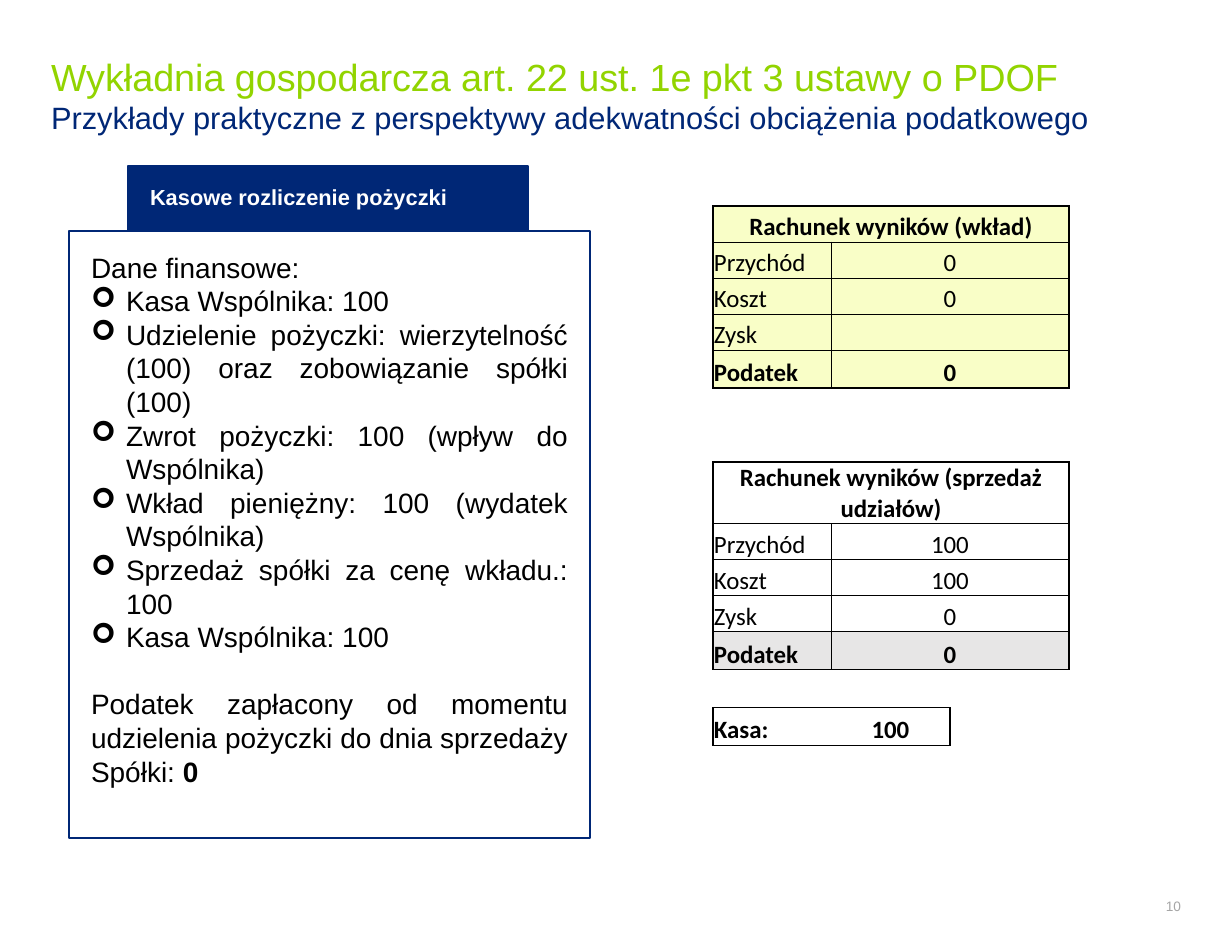
from dataclasses import dataclass

from lxml.etree import SubElement
from pptx import Presentation
from pptx.dml.color import RGBColor
from pptx.enum.shapes import MSO_SHAPE
from pptx.enum.text import MSO_ANCHOR, MSO_AUTO_SIZE, PP_ALIGN
from pptx.oxml.ns import qn
from pptx.util import Emu, Pt


@dataclass(frozen=True)
class Theme:
    """Colours, fonts and type sizes."""
    navy: str = "002776"
    green: str = "92D400"
    cream: str = "F9FEC7"
    grey: str = "E7E6E6"
    mute: str = "A6A6A6"
    black: str = "000000"
    white: str = "FFFFFF"
    font: str = "Arial"
    sheet: str = "Calibri"
    head: float = 24.3
    sub: float = 19.8
    body: float = 18
    tab: float = 14
    cell: float = 16
    note: float = 8.8
    line: float = 21.6


def px(size):
    """Turn pixels into EMU."""
    return Emu(size * 914400 // 112)


class Page:
    """Draws the elements of one slide in one style."""

    def __init__(self, deck, theme):
        """Add a slide with title and body."""
        self.theme = theme
        self.slide = deck.slides.add_slide(deck.slide_layouts[1])

    def place(self, shape, box):
        """Move a shape to a box."""
        shape.left, shape.top, shape.width, shape.height = map(px, box)

    def frame(self, shape, inset, anchor=MSO_ANCHOR.MIDDLE):
        """Set insets, wrapping and anchor."""
        frame = shape.text_frame
        frame.word_wrap = True
        frame.auto_size = MSO_AUTO_SIZE.NONE
        frame.vertical_anchor = anchor
        frame.margin_left = frame.margin_right = px(inset)
        frame.margin_top = frame.margin_bottom = px(inset)
        return frame

    def ink(self, run, size, color, bold=False, font=None):
        """Format a run."""
        run.font.name = font or self.theme.font
        run.font.size = Pt(size)
        run.font.bold = bold
        run.font.color.rgb = RGBColor.from_string(color)

    def title(self, box, head, sub):
        """Fill the title with a heading and a subheading."""
        look = self.theme
        shape = self.slide.shapes.title
        self.place(shape, box)
        frame = self.frame(shape, 0)
        frame.text = f"{head}\v{sub}"
        part = frame.paragraphs[0]
        part.alignment = PP_ALIGN.LEFT
        styles = (look.head, look.green), (look.sub, look.navy)
        for run, style in zip(part.runs, styles):
            self.ink(run, *style)

    def note(self, box, text):
        """Add a small right-aligned text."""
        frame = self.frame(self.slide.shapes.add_textbox(*map(px, box)), 0)
        frame.text = text
        part = frame.paragraphs[0]
        part.alignment = PP_ALIGN.RIGHT
        self.ink(part.runs[0], self.theme.note, self.theme.mute)

    def tab(self, box, text):
        """Add a filled label."""
        look = self.theme
        shape = self.slide.shapes.add_shape(MSO_SHAPE.RECTANGLE, *map(px, box))
        shape.shadow.inherit = False
        shape.fill.solid()
        shape.fill.fore_color.rgb = RGBColor.from_string(look.navy)
        shape.line.color.rgb = RGBColor.from_string(look.navy)
        shape.line.width = Pt(1)
        frame = self.frame(shape, 22)
        frame.text = text
        part = frame.paragraphs[0]
        part.alignment = PP_ALIGN.LEFT
        part.line_spacing = Pt(15)
        part.space_after = Pt(6)
        self.ink(part.runs[0], look.tab, look.white, True)

    def list(self, box, intro, items, end, total):
        """Fill the body with an intro, bullets and a closing sum."""
        look = self.theme
        shape = self.slide.placeholders[1]
        self.place(shape, box)
        shape.line.color.rgb = RGBColor.from_string(look.navy)
        shape.line.width = Pt(1)
        frame = self.frame(shape, 22, MSO_ANCHOR.TOP)
        frame.margin_top = px(19)
        frame.text = "\n".join((intro, *items, end))
        for part in frame.paragraphs:
            part.alignment = PP_ALIGN.JUSTIFY
            part.line_spacing = Pt(look.line)
            part.space_before = Pt(0)
            self.ink(part.runs[0], look.body, look.black)
            self.bullet(part, part.text in items)
        part.space_before = Pt(look.line)
        run = part.add_run()
        run.text = total
        self.ink(run, look.body, look.black, True)

    def bullet(self, part, shown):
        """Set or clear the arrow bullet."""
        prop = part._p.get_or_add_pPr()
        hang = px(35) if shown else 0
        prop.set("marL", str(hang))
        prop.set("indent", str(-hang))
        if shown:
            SubElement(prop, qn("a:buFont"), typeface="Wingdings")
            SubElement(prop, qn("a:buChar"), char="➢")
        else:
            SubElement(prop, qn("a:buNone"))

    def grid(self, spot, cols, rows):
        """Add a plain table without fills."""
        box = (*spot, sum(cols), sum(rows))
        table = self.slide.shapes.add_table(
            len(rows), len(cols), *map(px, box)).table
        table.first_row = table.horz_banding = False
        table._tbl.tblPr[0].text = "{2D5ABB26-0587-4C30-8999-92F81FD0307C}"
        for col, wide in zip(table.columns, cols):
            col.width = px(wide)
        for row, high in zip(table.rows, rows):
            row.height = px(high)
        for cell in table.iter_cells():
            cell.margin_left = cell.margin_right = cell.margin_top = px(1)
            cell.margin_bottom = 0
            cell.vertical_anchor = MSO_ANCHOR.BOTTOM
        return table

    def edge(self, cell, widths):
        """Draw left, right, top and bottom borders."""
        prop = cell._tc.get_or_add_tcPr()
        for side, width in zip("LRTB", widths):
            if width:
                line = SubElement(prop, qn(f"a:ln{side}"), w=str(Pt(width)))
                fill = SubElement(line, qn("a:solidFill"))
                SubElement(fill, qn("a:srgbClr"), val=self.theme.black)

    def cell(self, table, row, cols, text, widths, fill=None, bold=False):
        """Fill a cell that spans the given columns."""
        first, last = cols
        cell = table.cell(row, first)
        if last > first:
            cell.merge(table.cell(row, last))
        for col in range(first, last + 1):
            self.edge(table.cell(row, col), widths)
        if fill:
            cell.fill.solid()
            cell.fill.fore_color.rgb = RGBColor.from_string(fill)
        cell.text = text
        part = cell.text_frame.paragraphs[0]
        part.alignment = PP_ALIGN.CENTER if last else PP_ALIGN.LEFT
        for run in part.runs:
            self.ink(run, self.theme.cell, self.theme.black, bold,
                     self.theme.sheet)

    def block(self, table, top, head, values, fill, base):
        """Write an income statement from a row down."""
        self.cell(table, top, (0, 2), head, (1, 1, 1, 0.5), fill, True)
        names = "Przychód", "Koszt", "Zysk", "Podatek"
        for row, (name, value) in enumerate(zip(names, values), 1):
            sums = row == len(names)
            low = 1 if sums else 0.5
            tint = base if sums else fill
            self.cell(table, top + row, (0, 0), name, (1, 0.5, 0.5, low), tint, sums)
            self.cell(table, top + row, (1, 2), value, (0.5, 1, 0.5, low), tint, sums)


def main():
    """Build the slide."""
    look = Theme()
    deck = Presentation()
    deck.slide_width, deck.slide_height = px(1232), px(952)
    page = Page(deck, look)
    page.title((51, 35, 1130, 120),
               "Wykładnia gospodarcza art. 22 ust. 1e pkt 3 ustawy o PDOF",
               "Przykłady praktyczne z perspektywy adekwatności obciążenia podatkowego")
    page.note((1074, 889, 107, 35), "10")
    page.tab((128, 166, 400, 65), "Kasowe rozliczenie pożyczki")
    page.list((69, 231, 521, 607), "Dane finansowe:", (
        "Kasa Wspólnika: 100",
        "Udzielenie pożyczki: wierzytelność (100) oraz zobowiązanie spółki (100)",
        "Zwrot pożyczki: 100 (wpływ do Wspólnika)",
        "Wkład pieniężny: 100 (wydatek Wspólnika)",
        "Sprzedaż spółki za cenę wkładu.: 100",
        "Kasa Wspólnika: 100",
    ), "Podatek zapłacony od momentu udzielenia pożyczki do dnia sprzedaży Spółki: ", "0")
    part = [36] * 3 + [38]
    table = page.grid((713, 206), [118, 119, 119],
                      [36, *part, 36, 38, 62, *part, 38, 38])
    page.block(table, 0, "Rachunek wyników (wkład)", ("0", "0", "", "0"),
               look.cream, look.cream)
    page.block(table, 7, "Rachunek wyników (sprzedaż udziałów)",
               ("100", "100", "0", "0"), None, look.grey)
    page.cell(table, 13, (0, 0), "Kasa:", (1, 0, 1, 1), bold=True)
    page.cell(table, 13, (1, 1), "100", (0, 1, 1, 1), bold=True)
    deck.save("out.pptx")


if __name__ == "__main__":
    main()
